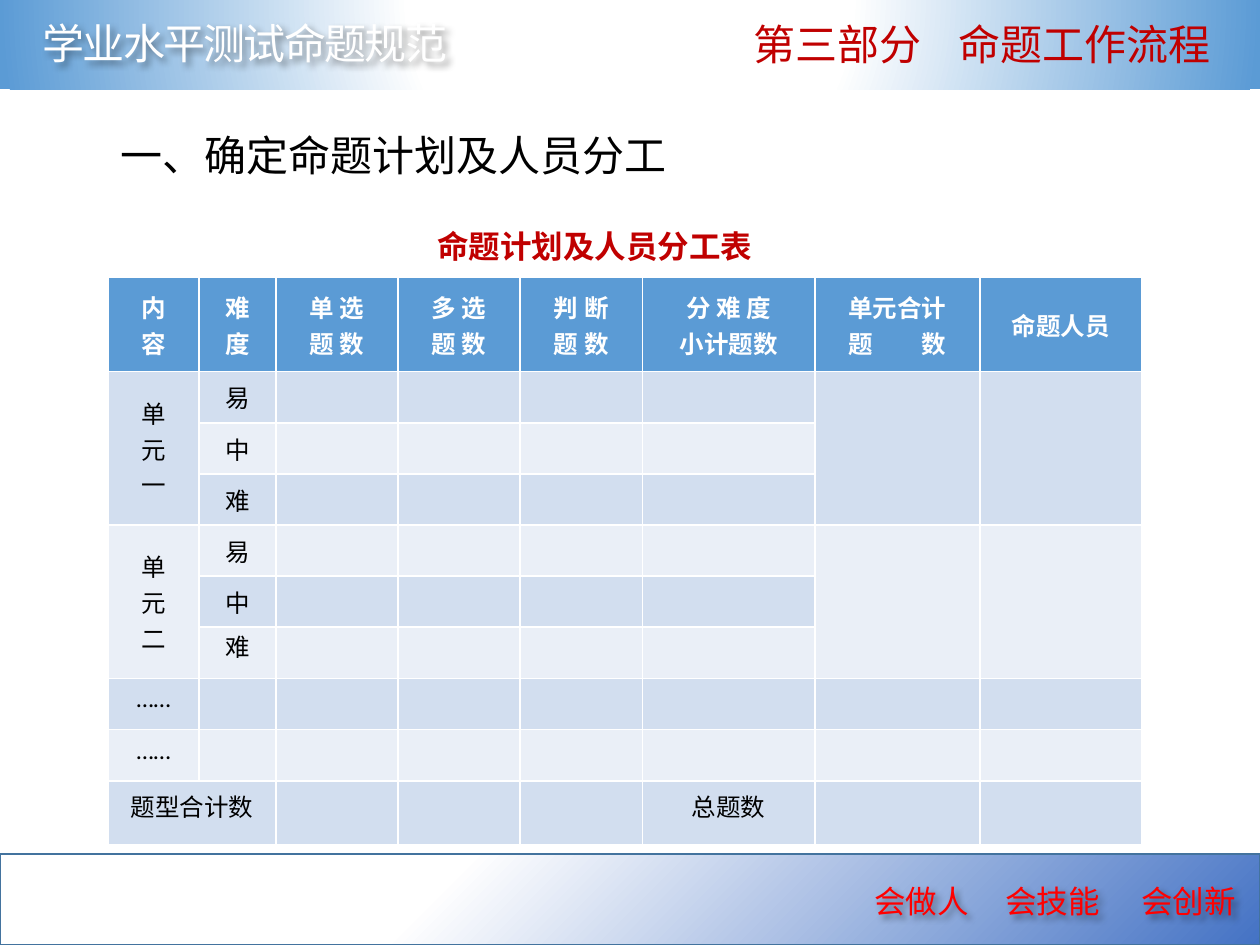
from lxml.etree import SubElement
from pptx import Presentation
from pptx.dml.color import RGBColor
from pptx.enum.shapes import MSO_SHAPE
from pptx.enum.text import MSO_ANCHOR, MSO_AUTO_SIZE, PP_ALIGN
from pptx.oxml import parse_xml
from pptx.oxml.ns import nsdecls, qn
from pptx.util import Inches, Pt

WIDTH, HEIGHT = 10, 7.5
BANNER_HEIGHT = 0.72
SANS = "Noto Sans CJK SC"
WHITE, BLACK, DARK_RED, RED = "FFFFFF", "000000", "C00000", "FF0000"
HEADER_FILL, BANDS = "5B9BD5", ("EAEFF7", "D2DEEF")

BANNERS = [
    {"top": HEIGHT - BANNER_HEIGHT, "color": "4472C4", "focus": (0, 0, 100, 100), "line": "43739E"},
    {"top": -0.01, "color": HEADER_FILL, "focus": (50, -80, 50, 180), "line": None},
]
TITLE = "第三部分\t命题工作流程"
MOTTO = "会做人\t会技能\t会创新"
COURSE = "学业水平测试命题规范"
SECTION = "一、确定命题计划及人员分工"
CAPTION = "命题计划及人员分工表"

COLUMNS = [0.72, 0.61, 0.97, 0.97, 0.97, 1.37, 1.31, 1.28]
ROWS = [0.75] + [0.38] * 5 + [0.4, 0.4, 0.41, 0.51]
HEADINGS = ["内\n容", "难\n度", "单 选\n题 数", "多 选\n题 数", "判 断\n题 数",
            "分 难 度\n小计题数", "单元合计\n题　　数", "命题人员"]
UNITS = ["单\n元\n一", "单\n元\n二"]
LEVELS = ["易", "中", "难"]
UNIT_COLUMNS = (0, 6, 7)
FIRST_TIGHT_ROW = 6
SUMMARY = {(7, 0): "……", (8, 0): "……", (9, 0): "题型合计数", (9, 5): "总题数"}


def rgb(value):
    return RGBColor.from_string(value)


def add_shadow(shape, distance):
    properties = shape._element.spPr
    for effects in properties.findall(qn("a:effectLst")):
        properties.remove(effects)
    properties.append(parse_xml(
        f'<a:effectLst {nsdecls("a")}><a:outerShdw blurRad="50800" dist="{Pt(distance)}" '
        'dir="2700000"><a:srgbClr val="000000"><a:alpha val="40000"/></a:srgbClr>'
        '</a:outerShdw></a:effectLst>'))


def add_banner(slide, top, color, focus, line):
    shape = slide.shapes.add_shape(
        MSO_SHAPE.RECTANGLE, 0, Inches(top), Inches(WIDTH), Inches(BANNER_HEIGHT))
    shape.shadow.inherit = False
    stops = "".join(
        f'<a:gs pos="{position * 1000}"><a:srgbClr val="{stop}"/></a:gs>'
        for position, stop in ((0, WHITE), (35, WHITE), (100, color)))
    edges = " ".join(f'{side}="{share * 1000}"' for side, share in zip("ltrb", focus))
    gradient = parse_xml(
        f'<a:gradFill {nsdecls("a")} rotWithShape="1"><a:gsLst>{stops}</a:gsLst>'
        f'<a:path path="circle"><a:fillToRect {edges}/></a:path></a:gradFill>')
    shape._element.spPr.find(qn("a:prstGeom")).addnext(gradient)
    if line:
        shape.line.color.rgb = rgb(line)
        shape.line.width = Pt(1)
        add_shadow(shape, 4)
    else:
        shape.line.fill.background()


def format_paragraph(paragraph, size, color, name=SANS, bold=False, tabs=()):
    if tabs:
        tab_list = SubElement(paragraph._p.get_or_add_pPr(), qn("a:tabLst"))
        for position in tabs:
            SubElement(tab_list, qn("a:tab"), pos=str(Inches(position)), algn="l")
    font = paragraph.font
    font.size = Pt(size)
    font.bold = bold
    font.color.rgb = rgb(color)
    font.name = name
    SubElement(font._element, qn("a:ea"), typeface=SANS)


def write_text(shape, box, text, size, color, **style):
    shape.left, shape.top, shape.width, shape.height = map(Inches, box)
    frame = shape.text_frame
    frame.text = text
    frame.word_wrap = True
    frame.auto_size = MSO_AUTO_SIZE.NONE
    frame.vertical_anchor = MSO_ANCHOR.TOP
    paragraph = frame.paragraphs[0]
    paragraph.alignment = PP_ALIGN.LEFT
    format_paragraph(paragraph, size, color, **style)
    return shape


def add_text(slide, box, *content, **style):
    return write_text(slide.shapes.add_textbox(0, 0, 0, 0), box, *content, **style)


def write_cell(table, row, column, text):
    cell = table.cell(row, column)
    cell.text = text
    cell.vertical_anchor = MSO_ANCHOR.MIDDLE
    cell.margin_left = cell.margin_right = Inches(0.08)
    cell.margin_top = cell.margin_bottom = Inches(0.04)
    for paragraph in cell.text_frame.paragraphs:
        paragraph.alignment = PP_ALIGN.CENTER
        if row >= FIRST_TIGHT_ROW:
            paragraph.line_spacing = Pt(12)
        format_paragraph(paragraph, 14, BLACK if row else WHITE, "Calibri", row == 0)


def add_plan_table(slide):
    table = slide.shapes.add_table(
        len(ROWS), len(COLUMNS), Inches(0.86), Inches(2.2),
        Inches(sum(COLUMNS)), Inches(sum(ROWS))).table
    for column, width in zip(table.columns, COLUMNS):
        column.width = Inches(width)
    for row, height in zip(table.rows, ROWS):
        row.height = Inches(height)
    for row in range(len(ROWS)):
        for column in range(len(COLUMNS)):
            fill = table.cell(row, column).fill
            fill.solid()
            fill.fore_color.rgb = rgb(BANDS[row % 2] if row else HEADER_FILL)

    texts = {(0, column): heading for column, heading in enumerate(HEADINGS)} | SUMMARY
    for unit, label in enumerate(UNITS):
        first = 1 + unit * len(LEVELS)
        last = first + len(LEVELS) - 1
        for column in UNIT_COLUMNS:
            table.cell(first, column).merge(table.cell(last, column))
        texts[first, 0] = label
        for offset, level in enumerate(LEVELS):
            texts[first + offset, 1] = level
    table.cell(9, 0).merge(table.cell(9, 1))
    for (row, column), text in texts.items():
        write_cell(table, row, column, text)


def main():
    presentation = Presentation()
    presentation.slide_width, presentation.slide_height = Inches(WIDTH), Inches(HEIGHT)
    slide = presentation.slides.add_slide(presentation.slide_layouts[5])
    for banner in BANNERS:
        add_banner(slide, **banner)
    motto = add_text(slide, (6.84, 6.95, 3.45, 0.4), MOTTO, 18, RED,
                     name="Noto Sans CJK JP", tabs=(1.04, 2.12))
    course = add_text(slide, (0.24, 0.09, 3.6, 0.5), COURSE, 24, WHITE)
    course.text_frame.paragraphs[0].runs[0].font._element.set("spc", "-100")
    for shape in (motto, course):
        add_shadow(shape, 3)
    add_text(slide, (0.86, 0.98, 5.01, 0.5), SECTION, 24, BLACK)
    caption = add_text(slide, (3.37, 1.6, 3.18, 0.64), CAPTION, 18, DARK_RED,
                       name="Calibri", bold=True)
    caption.text_frame.paragraphs[0].line_spacing = 1.5
    title = slide.shapes.title
    write_text(title, (5.88, 0.1, 4.01, 0.5), TITLE, 24, DARK_RED, tabs=(1.63,))
    slide.shapes._spTree.append(title._element)
    add_plan_table(slide)
    presentation.save("out.pptx")


if __name__ == "__main__":
    main()
